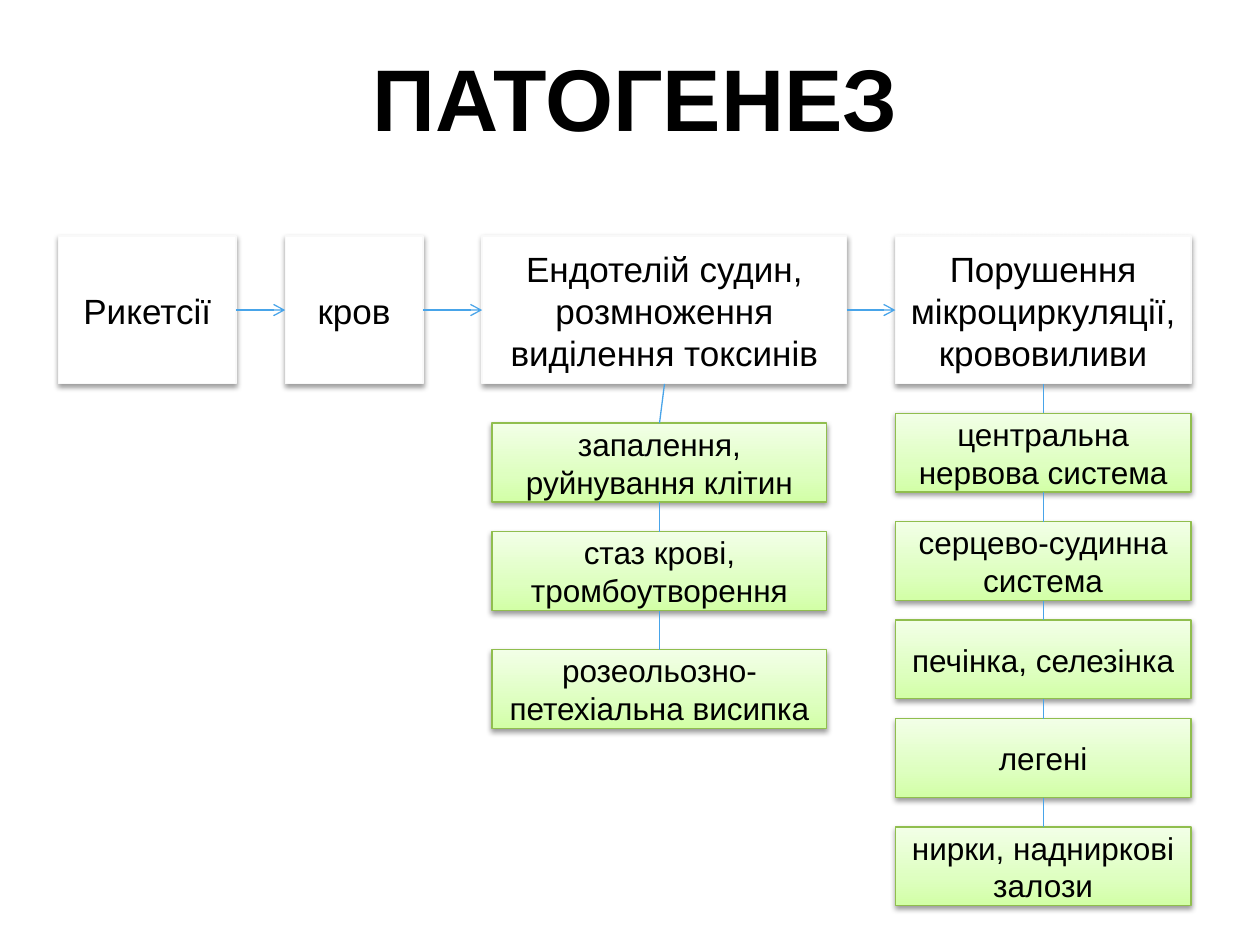
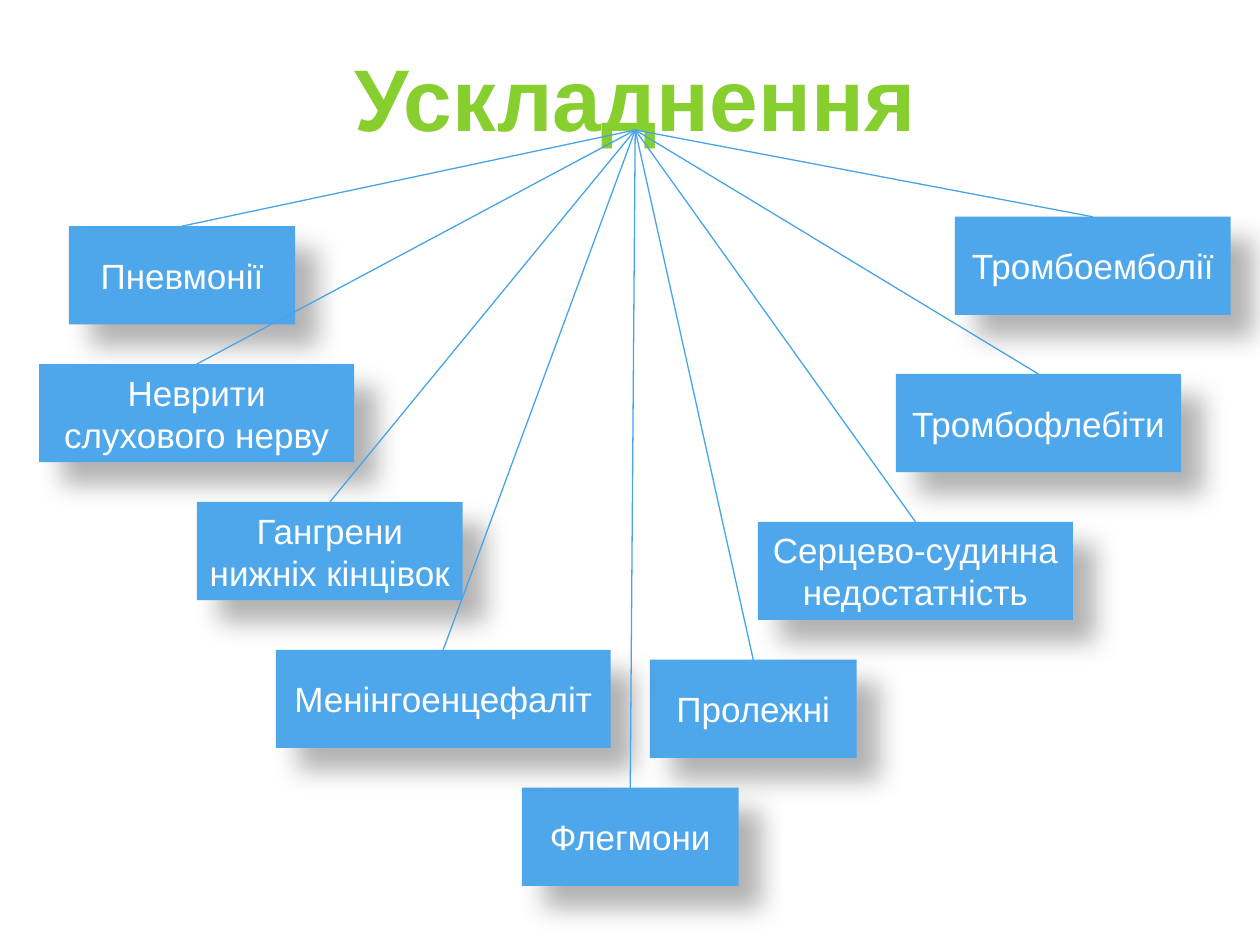
from copy import deepcopy
from dataclasses import dataclass
from itertools import pairwise

from lxml import etree
from pptx import Presentation
from pptx.dml.color import RGBColor
from pptx.enum import shapes, text
from pptx.oxml import ns
from pptx.util import Cm, Pt

TOP, LEFT, BOTTOM, RIGHT = range(4)


@dataclass(frozen=True)
class Shadow:
    alpha: int
    blur: float
    distance: float
    angle: int


@dataclass(frozen=True)
class Theme:
    font: str = "Arial"
    black: str = "000000"
    white: str = "FFFFFF"
    title_green: str = "87CE2F"
    stage_edge: str = "F9F9F9"
    effect_edge: str = "90BE4E"
    effect_stops: tuple = ((0, "D2FFA6"), (0.35, "DEFFC0"), (1, "F2FFE7"))
    complication: str = "4EA7EA"
    link: str = "48A4E9"
    title_size: int = 50
    body_size: int = 20
    effect_size: int = 18
    line_width: float = 0.75
    soft_shadow: Shadow = Shadow(38, 3.1, 1.6, 90)
    deep_shadow: Shadow = Shadow(30, 15, 18, 45)


THEME = Theme()
TITLE_BOX = (2.96, 1.27, 19.69, 1.35)


def color(value):
    return RGBColor.from_string(value)


def write(box, wording, size, ink, bold=False):
    frame = box.text_frame
    frame.word_wrap = True
    frame.vertical_anchor = text.MSO_ANCHOR.MIDDLE
    frame.margin_left = frame.margin_right = Cm(0.2)
    frame.margin_top = frame.margin_bottom = 0
    para = frame.paragraphs[0]
    para.text = wording
    para.alignment = text.PP_ALIGN.CENTER
    font = para.font
    font.name, font.size, font.bold = THEME.font, Pt(size), bold
    font.color.rgb = color(ink)


def add_title(page, wording, ink):
    title = page.shapes.add_textbox(*map(Cm, TITLE_BOX))
    write(title, wording, THEME.title_size, ink, bold=True)
    return title


def cast_shadow(box, shadow):
    box.shadow.inherit = False
    effects = box._element.spPr.find(ns.qn("a:effectLst"))
    outer = etree.SubElement(
        effects, ns.qn("a:outerShdw"), blurRad=str(Pt(shadow.blur)),
        dist=str(Pt(shadow.distance)), dir=str(shadow.angle * 60000),
        algn="tl", rotWithShape="0")
    ink = etree.SubElement(outer, ns.qn("a:srgbClr"), val=THEME.black)
    etree.SubElement(ink, ns.qn("a:alpha"), val=str(shadow.alpha * 1000))


def fill_gradient(box, stops):
    box.fill.gradient()
    box.fill.gradient_angle = 90
    stop_list = box._element.spPr.find(".//" + ns.qn("a:gsLst"))
    stop_list.append(deepcopy(stop_list[0]))
    for stop, (position, value) in zip(box.fill.gradient_stops, stops):
        stop.position = position
        stop.color.rgb = color(value)


def add_box(page, place, wording, size, ink, shadow, fill=None, edge=None):
    box = page.shapes.add_shape(shapes.MSO_SHAPE.RECTANGLE, *map(Cm, place))
    if fill:
        box.fill.solid()
        box.fill.fore_color.rgb = color(fill)
    else:
        fill_gradient(box, THEME.effect_stops)
    if edge:
        box.line.color.rgb = color(edge)
        box.line.width = Pt(THEME.line_width)
    else:
        box.line.fill.background()
    cast_shadow(box, shadow)
    write(box, wording, size, ink)
    return box


def link(page, start, start_side, end, end_side, arrow=False):
    line = page.shapes.add_connector(shapes.MSO_CONNECTOR.STRAIGHT, 0, 0, 0, 0)
    line.begin_connect(start, start_side)
    line.end_connect(end, end_side)
    line.line.color.rgb = color(THEME.link)
    line.line.width = Pt(THEME.line_width)
    properties = line._element.spPr
    if arrow:
        etree.SubElement(properties.find(ns.qn("a:ln")), ns.qn("a:tailEnd"), type="arrow")
    etree.SubElement(properties, ns.qn("a:effectLst"))


def add_stage_row(page, top, height, stages):
    row = [add_box(page, (left, top, width, height), wording, THEME.body_size,
                   THEME.black, THEME.soft_shadow, THEME.white, THEME.stage_edge)
           for left, width, wording in stages]
    for start, end in pairwise(row):
        link(page, start, RIGHT, end, LEFT, arrow=True)
    return row


def add_effect_column(page, stage, left, width, effects):
    column = [add_box(page, (left, top, width, 1.59), wording, THEME.effect_size,
                      THEME.black, THEME.soft_shadow, edge=THEME.effect_edge)
              for top, wording in effects]
    for start, end in pairwise([stage, *column]):
        link(page, start, BOTTOM, end, TOP)


def add_complications(page, title, height, complications):
    boxes = [add_box(page, (left, top, width, height), wording, THEME.body_size,
                     THEME.white, THEME.deep_shadow, THEME.complication)
             for left, top, width, wording in complications]
    for box in boxes:
        link(page, title, BOTTOM, box, TOP)


def build_pathogenesis(page):
    add_title(page, "ПАТОГЕНЕЗ", THEME.black)
    *_, endothelium, circulation = add_stage_row(page, 4.76, 2.98, [
        (1.18, 3.58, "Рикетсії"),
        (5.75, 2.78, "кров"),
        (9.72, 7.35, "Ендотелій судин, розмноження виділення токсинів"),
        (18.05, 5.96, "Порушення мікроциркуляції, крововиливи"),
    ])
    add_effect_column(page, endothelium, 9.92, 6.75, [
        (8.53, "запалення, руйнування клітин"),
        (10.72, "стаз крові, тромбоутворення"),
        (13.1, "розеольозно-петехіальна висипка"),
    ])
    add_effect_column(page, circulation, 18.05, 5.96, [
        (8.33, "центральна нервова система"),
        (10.52, "серцево-судинна система"),
        (12.5, "печінка, селезінка"),
        (14.49, "легені"),
        (16.67, "нирки, надниркові залози"),
    ])


def build_complications(page):
    title = add_title(page, "Ускладнення", THEME.title_green)
    add_complications(page, title, 1.98, [
        (1.39, 4.56, 4.56, "Пневмонії"),
        (13.1, 13.3, 4.17, "Пролежні"),
        (18.06, 7.54, 5.75, "Тромбофлебіти"),
        (19.25, 4.37, 5.56, "Тромбоемболії"),
        (0.79, 7.34, 6.35, "Неврити слухового нерву"),
        (3.97, 10.12, 5.36, "Гангрени нижніх кінцівок"),
        (10.52, 15.88, 4.37, "Флегмони"),
        (15.28, 10.52, 6.35, "Серцево-судинна недостатність"),
        (5.56, 13.1, 6.75, "Менінгоенцефаліт"),
    ])


def main():
    deck = Presentation()
    deck.slide_width, deck.slide_height = Cm(25.4), Cm(19.05)
    for build in (build_pathogenesis, build_complications):
        build(deck.slides.add_slide(deck.slide_layouts[6]))
    deck.save("out.pptx")


if __name__ == "__main__":
    main()
